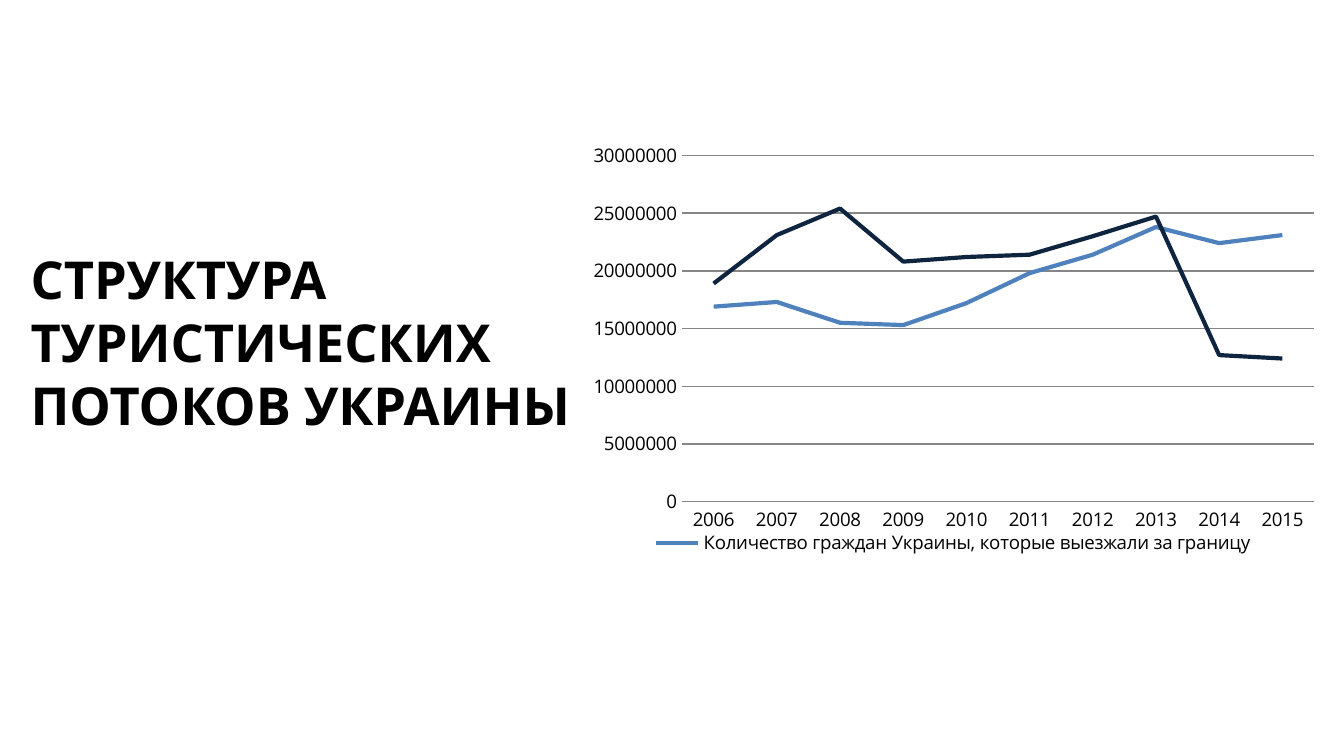
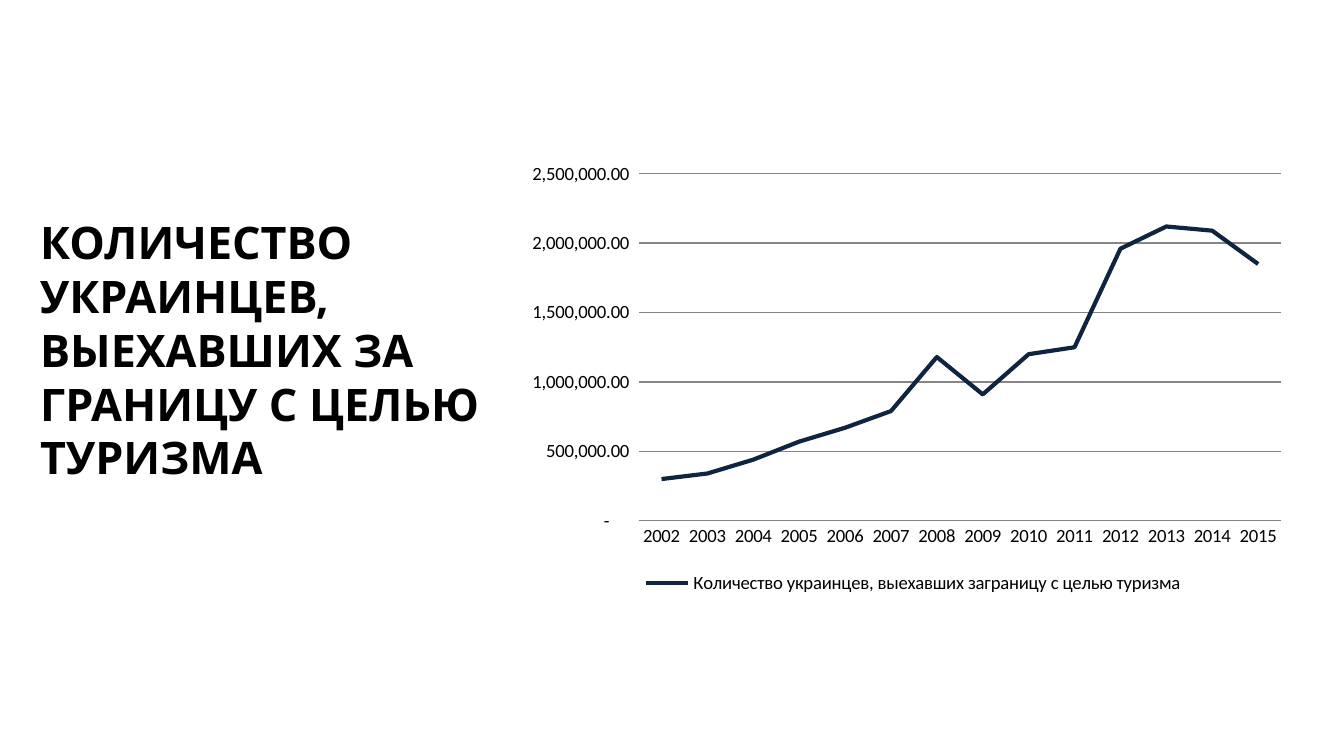
from lxml.etree import SubElement
from pptx import Presentation
from pptx.chart.data import CategoryChartData as ChartData
from pptx.dml.color import RGBColor
from pptx.enum.chart import XL_CHART_TYPE as ChartType
from pptx.enum.chart import XL_LEGEND_POSITION as LegendPosition
from pptx.enum.chart import XL_TICK_MARK as TickMark
from pptx.enum.text import MSO_AUTO_SIZE as AutoSize
from pptx.oxml import parse_xml
from pptx.oxml.ns import nsdecls, qn
from pptx.util import Cm, Pt

BLACK = RGBColor(0x00, 0x00, 0x00)
WHITE = RGBColor(0xFF, 0xFF, 0xFF)
BLUE = RGBColor(0x4F, 0x81, 0xBD)
NAVY = RGBColor(0x0F, 0x24, 0x3E)
GREY = RGBColor(0x86, 0x86, 0x86)
ACCOUNTING = r'_(* #,##0.00_);_(* \(#,##0.00\);_(* "-"??_);_(@_)'


def apply(target, formats):
    for name, value in formats.items():
        setattr(target, name, value)


def place(parent, index, inner=False, **fractions):
    for old in parent.findall(qn("c:layout")):
        parent.remove(old)
    layout = parse_xml(f"<c:layout {nsdecls('c')}/>")
    manual = SubElement(layout, qn("c:manualLayout"))
    if inner:
        SubElement(manual, qn("c:layoutTarget")).set("val", "inner")
    for mode in ("xMode", "yMode"):
        SubElement(manual, qn(f"c:{mode}")).set("val", "edge")
    for name, value in fractions.items():
        SubElement(manual, qn(f"c:{name}")).set("val", str(value))
    parent.insert(index, layout)


class Deck:
    title_font = {"name": "Open Sans", "bold": True}
    chart_font = {"size": Pt(10)}
    axis_marks = {"major_tick_mark": TickMark.NONE, "minor_tick_mark": TickMark.NONE}

    def __init__(self):
        self.deck = Presentation()
        apply(self.deck, {"slide_width": Cm(25.4), "slide_height": Cm(14.29)})
        self.page = None

    def add_page(self):
        self.page = self.deck.slides.add_slide(self.deck.slide_layouts[6])
        fill = self.page.background.fill
        fill.solid()
        fill.fore_color.rgb = WHITE

    def add_title(self, text, size, position):
        box = self.page.shapes.add_textbox(*map(Cm, position))
        frame = box.text_frame
        apply(frame, {"word_wrap": True, "auto_size": AutoSize.SHAPE_TO_FIT_TEXT})
        span = frame.paragraphs[0].add_run()
        span.text = text
        apply(span.font, {**self.title_font, "size": Pt(size)})
        span.font.color.rgb = BLACK

    def add_line_chart(self, position, years, series, font, top, step,
                       plot_area, legend_area, number_format="General", hidden_entries=()):
        data = ChartData(number_format=number_format)
        data.categories = [str(year) for year in years]
        for name, values, _ in series:
            data.add_series(name, values)
        chart = self.page.shapes.add_chart(ChartType.LINE, *map(Cm, position), data).chart
        apply(chart, {"has_title": False, "has_legend": True})
        apply(chart.font, {**self.chart_font, "name": font})
        chart.font.color.rgb = BLACK
        plot = chart.plots[0]
        plot.vary_by_categories = False
        for line, (_, _, color) in zip(plot.series, series):
            line.smooth = False
            line.format.line.width = Pt(2.25)
            line.format.line.color.rgb = color
        self.style_axes(chart, top, step, number_format)
        place(plot._element.getparent(), 0, inner=True, **plot_area)
        self.style_legend(chart.legend, legend_area, hidden_entries)

    def style_axes(self, chart, top, step, number_format):
        years, values = chart.category_axis, chart.value_axis
        for axis in (years, values):
            apply(axis, self.axis_marks)
        apply(values, {"minimum_scale": 0, "maximum_scale": top, "major_unit": step,
                       "has_major_gridlines": True})
        apply(values.tick_labels, {"number_format": number_format,
                                   "number_format_is_linked": False})
        values.format.line.fill.background()
        for line in (years.format.line, values.major_gridlines.format.line):
            line.width = Pt(0.75)
            line.color.rgb = GREY

    def style_legend(self, legend, area, hidden_entries):
        apply(legend, {"position": LegendPosition.BOTTOM, "include_in_layout": False})
        place(legend._element, 1, **area)
        for number in hidden_entries:
            legend._element.insert(1, parse_xml(
                f'<c:legendEntry {nsdecls("c")}><c:idx val="{number}"/>'
                '<c:delete val="1"/></c:legendEntry>'))

    def save(self):
        self.deck.save("out.pptx")


def scaled(unit, *counts):
    return [count * unit for count in counts]


def add_flows(deck):
    deck.add_page()
    departures = scaled(100000, 169, 173, 155, 153, 172, 198, 214, 238, 224, 231)
    arrivals = scaled(100000, 189, 231, 254, 208, 212, 214, 230, 247, 127, 124)
    deck.add_line_chart(
        (10.9, 2.51, 14.22, 8.61), range(2006, 2016),
        [("Количество граждан Украины, которые выезжали за границу", departures, BLUE),
         ("Количество иностранных граждан, которые посетили Украину, человек", arrivals, NAVY)],
        "Open Sans", 30000000, 5000000,
        plot_area={"x": 0.14, "y": 0.05, "w": 0.84, "h": 0.76},
        legend_area={"x": 0.05, "y": 0.87, "w": 0.9, "h": 0.06},
        hidden_entries=[1])
    deck.add_title("СТРУКТУРА ТУРИСТИЧЕСКИХ ПОТОКОВ УКРАИНЫ", 28, (0.33, 4.55, 11.43, 3.84))


def add_tourists(deck):
    deck.add_page()
    deck.add_title("КОЛИЧЕСТВО УКРАИНЦЕВ, ВЫЕХАВШИХ ЗА ГРАНИЦУ С ЦЕЛЬЮ ТУРИЗМА", 24,
                   (0.51, 3.94, 11.4, 5.38))
    tourists = scaled(10000, 30, 34, 44, 57, 67, 79, 118, 91, 120, 125, 196, 212, 209, 185)
    deck.add_line_chart(
        (9.7, 2.95, 14.81, 8.41), range(2002, 2016),
        [("Количество украинцев, выехавших заграницу с целью туризма", tourists, NAVY)],
        "Calibri", 2500000, 500000,
        plot_area={"x": 0.16, "y": 0.04, "w": 0.82, "h": 0.78},
        legend_area={"x": 0.15, "y": 0.93, "w": 0.72, "h": 0.07},
        number_format=ACCOUNTING)


def main():
    deck = Deck()
    add_flows(deck)
    add_tourists(deck)
    deck.save()


if __name__ == "__main__":
    main()
